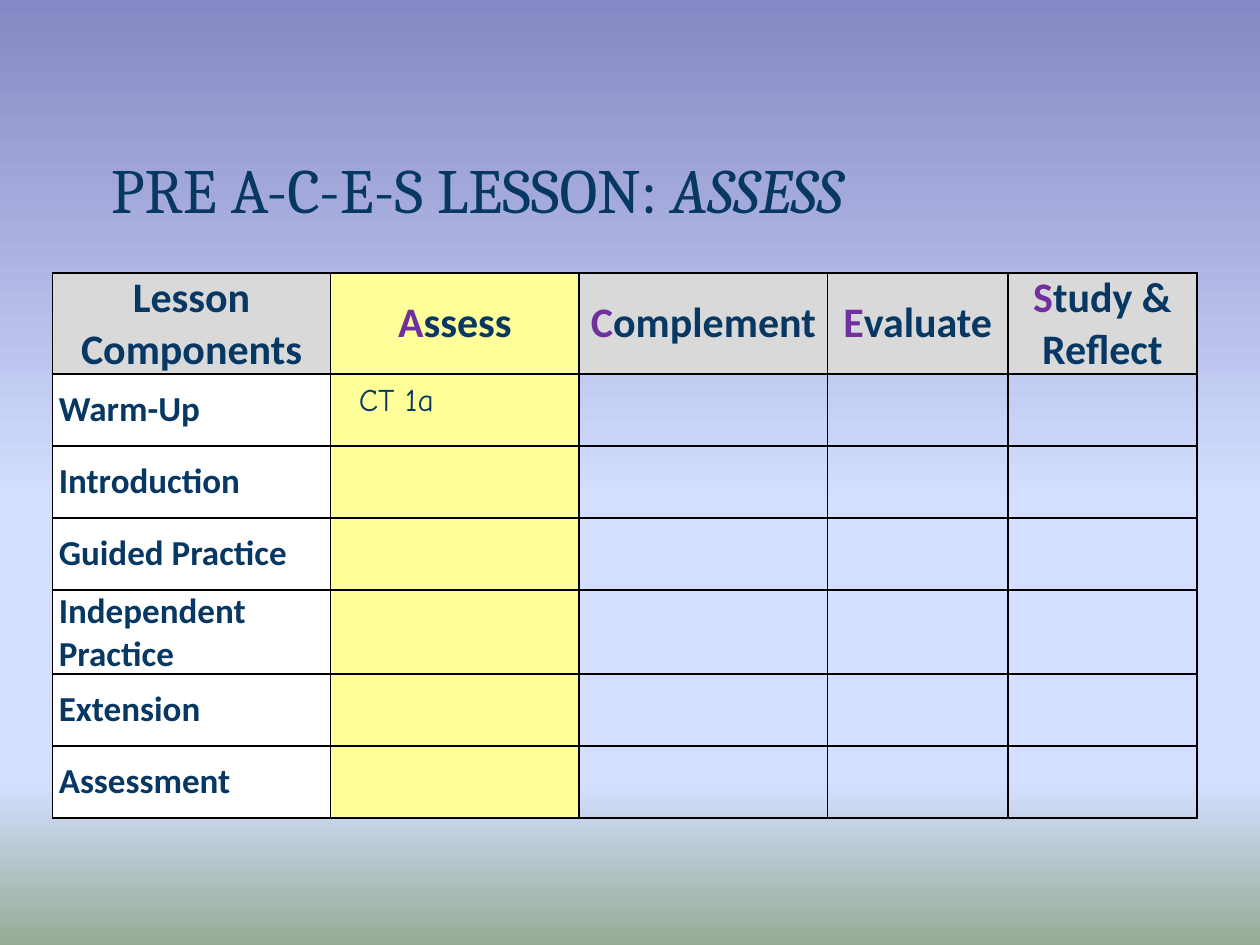
"""Build the lesson planning slide with its component grid."""
from dataclasses import dataclass

from lxml import etree
from pptx import Presentation
from pptx import util as u
from pptx.dml.color import RGBColor
from pptx.enum import text
from pptx.oxml.ns import qn

NAVY, PURPLE, BLACK = "073763", "7030A0", "000000"
GREY, YELLOW, WHITE = "D9D9D9", "FFFF99", "FFFFFF"
SKY = [(0, "8488C4"), (53, "D4DEFF"), (83, "D4DEFF"), (100, "96AB94")]
COMPONENTS = ["Warm-Up", "Introduction", "Guided Practice",
              "Independent Practice", "Extension", "Assessment"]
HEADER_HEIGHT, ROW_HEIGHT = 52.5, 41.14


@dataclass
class Stage:
    initial: str
    rest: str
    width: float
    header_fill: str = GREY
    body_fill: str | None = None


STAGES = [
    Stage("", "Lesson Components", 159, body_fill=WHITE),
    Stage("A", "ssess", 142, YELLOW, YELLOW),
    Stage("C", "omplement", 142),
    Stage("E", "valuate", 103),
    Stage("S", "tudy & Reflect", 108),
]


def color(value: str) -> RGBColor:
    return RGBColor.from_string(value)


def add_text(paragraph, words: str, *, font: str = "Calibri", size: float = 20,
             ink: str = NAVY, bold: bool = False, italic: bool = False) -> None:
    run = paragraph.add_run()
    run.text = words
    run.font.name, run.font.size = font, u.Pt(size)
    run.font.bold, run.font.italic = bold, italic
    run.font.color.rgb = color(ink)


def add_box(slide, left: float, top: float, width: float, height: float,
            spacing: float):
    box = slide.shapes.add_textbox(*map(u.Pt, (left, top, width, height)))
    box.text_frame.word_wrap = True
    box.text_frame.paragraphs[0].line_spacing = spacing
    return box.text_frame


def paint_background(slide) -> None:
    fill = slide.background.fill
    fill.gradient()
    fill.gradient_angle = 270
    stops = slide.element.xpath(".//a:gsLst")[0]
    for stop in list(stops):
        stops.remove(stop)
    for percent, value in SKY:
        stop = etree.SubElement(stops, qn("a:gs"), pos=str(percent * 1000))
        etree.SubElement(stop, qn("a:srgbClr"), val=value)


def format_cell(cell, fill: str | None) -> None:
    cell.vertical_anchor = text.MSO_ANCHOR.MIDDLE
    cell.margin_left = cell.margin_right = u.Pt(3.6)
    cell.margin_top = cell.margin_bottom = 0
    properties = cell._tc.get_or_add_tcPr()
    for side in ("lnL", "lnR", "lnT", "lnB"):
        border = etree.SubElement(properties, qn(f"a:{side}"), w=str(u.Pt(1)))
        solid = etree.SubElement(border, qn("a:solidFill"))
        etree.SubElement(solid, qn("a:srgbClr"), val=BLACK)
    if fill:
        cell.fill.solid()
        cell.fill.fore_color.rgb = color(fill)
    else:
        cell.fill.background()


def add_lesson_grid(slide) -> None:
    grid = slide.shapes.add_table(
        len(COMPONENTS) + 1, len(STAGES), u.Pt(30), u.Pt(156),
        u.Pt(sum(stage.width for stage in STAGES)),
        u.Pt(HEADER_HEIGHT + ROW_HEIGHT * len(COMPONENTS))).table
    grid.first_row = grid.horz_banding = False
    for index, row in enumerate(grid.rows):
        row.height = u.Pt(ROW_HEIGHT if index else HEADER_HEIGHT)
    for column, stage in enumerate(STAGES):
        grid.columns[column].width = u.Pt(stage.width)
        for index in range(len(COMPONENTS) + 1):
            format_cell(grid.cell(index, column),
                        stage.body_fill if index else stage.header_fill)
        heading = grid.cell(0, column).text_frame.paragraphs[0]
        heading.alignment = text.PP_ALIGN.CENTER
        if stage.initial:
            add_text(heading, stage.initial, size=24, ink=PURPLE, bold=True)
        add_text(heading, stage.rest, size=24, bold=True)
    for index, component in enumerate(COMPONENTS, start=1):
        add_text(grid.cell(index, 0).text_frame.paragraphs[0], component, bold=True)


def main() -> None:
    deck = Presentation()
    deck.slide_width, deck.slide_height = u.Pt(720), u.Pt(540)
    slide = deck.slides.add_slide(deck.slide_layouts[6])
    paint_background(slide)

    title = add_box(slide, 54, 38, 612, 96, 0.8)
    title.vertical_anchor = text.MSO_ANCHOR.BOTTOM
    title.margin_left = title.margin_right = u.Pt(9.36)
    title.margin_top = title.margin_bottom = u.Pt(5)
    for words, italic in (("PRE A-C-E-S LESSON: ", False), ("ASSESS", True)):
        add_text(title.paragraphs[0], words, font="Cambria", size=36, italic=italic)

    add_lesson_grid(slide)
    warm_up_note = add_box(slide, 198, 216, 126, 27.36, 0.9)
    add_text(warm_up_note.paragraphs[0], "CT 1a", font="Comic Neue", size=18)
    deck.save("out.pptx")


if __name__ == "__main__":
    main()
